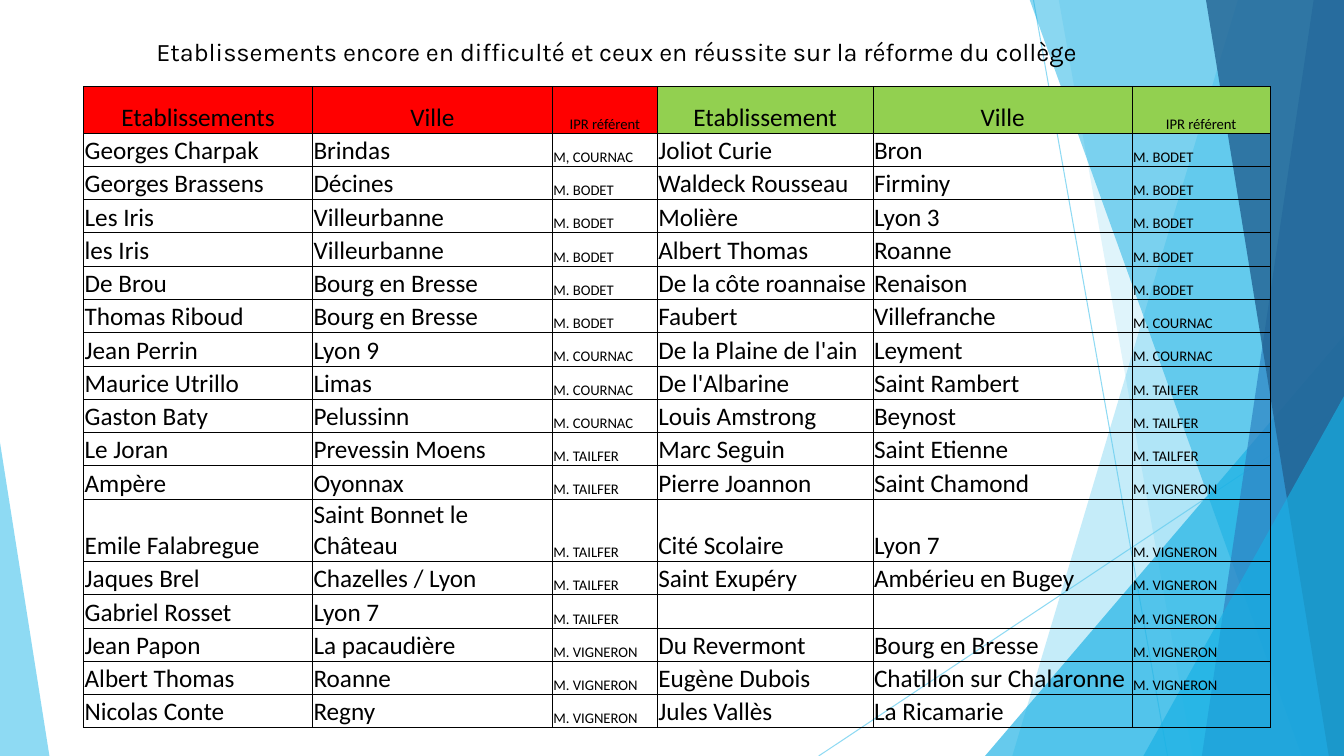
import pptx
import pptx.util
import pptx.dml.color
import pptx.enum.shapes
import pptx.enum.text
import pptx.oxml
import pptx.oxml.ns
import lxml.etree

PX = 9144  # 100 px to the inch
THEME = {
    "ink": "000000", "red": "FF0000", "green": "92D050",
    "sky": "5FCBEF", "cyan": "17B0E4", "blue": "2E83C3", "navy": "226292",
    "head": "Karla", "body": "Calibri", "big": 18, "small": 10.5,
}
ALIGN = pptx.enum.text.PP_ALIGN
ANCHOR = pptx.enum.text.MSO_ANCHOR


def write(frame, text, font="body", size="big", align=ALIGN.LEFT):
    para = frame.paragraphs[0]
    para.alignment = align
    run = para.add_run()
    run.text = text
    run.font.name = THEME[font]
    run.font.size = pptx.util.Pt(THEME[size])
    run.font.bold = False
    run.font.color.rgb = pptx.dml.color.RGBColor.from_string(THEME["ink"])


def tint(fill, color, alpha):
    fill.solid()
    fill.fore_color.rgb = pptx.dml.color.RGBColor.from_string(THEME[color])
    for node in fill._xPr.iter(pptx.oxml.ns.qn("a:srgbClr")):
        mark = lxml.etree.SubElement(node, pptx.oxml.ns.qn("a:alpha"))
        mark.set("val", str(alpha * 1000))


deck = pptx.Presentation()
deck.slide_width, deck.slide_height = 1333 * PX, 750 * PX
slide = deck.slides.add_slide(deck.slide_layouts[5])
shapes = slide.shapes

# Thin crossing lines
for ends in [(1025, 0, 1158, 750), (1333, 403, 812, 750)]:
    line = shapes.add_connector(
        pptx.enum.shapes.MSO_CONNECTOR.STRAIGHT, *[n * PX for n in ends])
    line.line.width = pptx.util.Pt(0.75)
    tint(line.line.fill, "sky", 70)
    lxml.etree.SubElement(line.element.spPr, pptx.oxml.ns.qn("a:effectLst"))

# Facets, back to front: bands give top and bottom left edges,
# triangles give their box and the place of the tip
facets = [
    ("band", (1228, 1004), "sky", 36),
    ("band", (1050, 1183), "sky", 20),
    ("tri", (977, 333, 356, 417, 1), "cyan", 66),
    ("band", (1021, 1291), "cyan", 50),
    ("band", (1303, 1192), "blue", 70),
    ("band", (1196, 1318), "navy", 80),
    ("tri", (1134, 393, 199, 357, 1), "cyan", 66),
    ("tri", (0, 439, 49, 311, 0), "sky", 70),
]
for kind, place, color, alpha in facets:
    if kind == "band":
        top, base = place
        pen = shapes.build_freeform(top, -1, scale=PX)
        pen.add_line_segments([(1333, -1), (1333, 750), (base, 750)])
        facet = pen.convert_to_shape()
    else:
        *box, tip = place
        facet = shapes.add_shape(
            pptx.enum.shapes.MSO_SHAPE.ISOSCELES_TRIANGLE,
            *[n * PX for n in box])
        facet.adjustments[0] = tip
    facet.shadow.inherit = False
    facet.line.fill.background()
    tint(facet.fill, color, alpha)

# Table of schools
rows = [
    "Etablissements|Ville|IPR référent|Etablissement|Ville|IPR référent",
    "Georges Charpak|Brindas|M, COURNAC|Joliot Curie|Bron|M. BODET",
    "Georges Brassens|Décines|M. BODET|Waldeck Rousseau|Firminy|M. BODET",
    "Les Iris|Villeurbanne|M. BODET|Molière|Lyon 3|M. BODET",
    "les Iris|Villeurbanne|M. BODET|Albert Thomas|Roanne|M. BODET",
    "De Brou|Bourg en Bresse|M. BODET|De la côte roannaise|Renaison|M. BODET",
    "Thomas Riboud|Bourg en Bresse|M. BODET|Faubert|Villefranche|M. COURNAC",
    "Jean Perrin|Lyon 9|M. COURNAC|De la Plaine de l'ain|Leyment|M. COURNAC",
    "Maurice Utrillo|Limas|M. COURNAC|De l'Albarine|Saint Rambert|M. TAILFER",
    "Gaston Baty|Pelussinn|M. COURNAC|Louis Amstrong|Beynost|M. TAILFER",
    "Le Joran|Prevessin Moens|M. TAILFER|Marc Seguin|Saint Etienne|M. TAILFER",
    "Ampère|Oyonnax|M. TAILFER|Pierre Joannon|Saint Chamond|M. VIGNERON",
    "Emile Falabregue|Saint Bonnet le Château|M. TAILFER|Cité Scolaire|Lyon 7|M. VIGNERON",
    "Jaques Brel|Chazelles / Lyon|M. TAILFER|Saint Exupéry|Ambérieu en Bugey|M. VIGNERON",
    "Gabriel Rosset|Lyon 7|M. TAILFER|||M. VIGNERON",
    "Jean Papon|La pacaudière|M. VIGNERON|Du Revermont|Bourg en Bresse|M. VIGNERON",
    "Albert Thomas|Roanne|M. VIGNERON|Eugène Dubois|Chatillon sur Chalaronne|M. VIGNERON",
    "Nicolas Conte|Regny|M. VIGNERON|Jules Vallès|La Ricamarie|",
]
widths = [227, 238, 104, 214, 257, 137]
tall = {0: 46, 12: 62}

table = shapes.add_table(
    len(rows), len(widths), 83 * PX, 86 * PX, 1176 * PX, 636 * PX).table
table.first_row = table.horz_banding = False
for c, width in enumerate(widths):
    table.columns[c].width = width * PX
for r, row in enumerate(rows):
    table.rows[r].height = tall.get(r, 33) * PX
    for c, text in enumerate(row.split("|")):
        cell = table.cell(r, c)
        cell.margin_left = cell.margin_right = cell.margin_top = PX
        cell.margin_bottom = 0
        cell.vertical_anchor = ANCHOR.BOTTOM
        for side in ("lnL", "lnR", "lnT", "lnB"):
            cell._tc.get_or_add_tcPr().append(pptx.oxml.parse_xml(
                f'<a:{side} {pptx.oxml.ns.nsdecls("a")} w="6350"><a:solidFill>'
                f'<a:srgbClr val="{THEME["ink"]}"/></a:solidFill></a:{side}>'))
        if r == 0:
            tint(cell.fill, "red" if c < 3 else "green", 100)
        else:
            cell.fill.background()
        if text:
            write(cell.text_frame, text,
                  size="small" if c % 3 == 2 else "big",
                  align=ALIGN.LEFT if r else ALIGN.CENTER)

# Title, in front of the facets
title = shapes.title
title.left, title.top, title.width, title.height = [
    n * PX for n in (145, 31, 1050, 40)]
frame = title.text_frame
frame.word_wrap = True
frame.auto_size = pptx.enum.text.MSO_AUTO_SIZE.SHAPE_TO_FIT_TEXT
frame.vertical_anchor = ANCHOR.TOP
write(frame, "Etablissements encore en difficulté et ceux en réussite "
      "sur la réforme du collège", font="head")
shapes.element.append(title.element)

deck.save("out.pptx")
